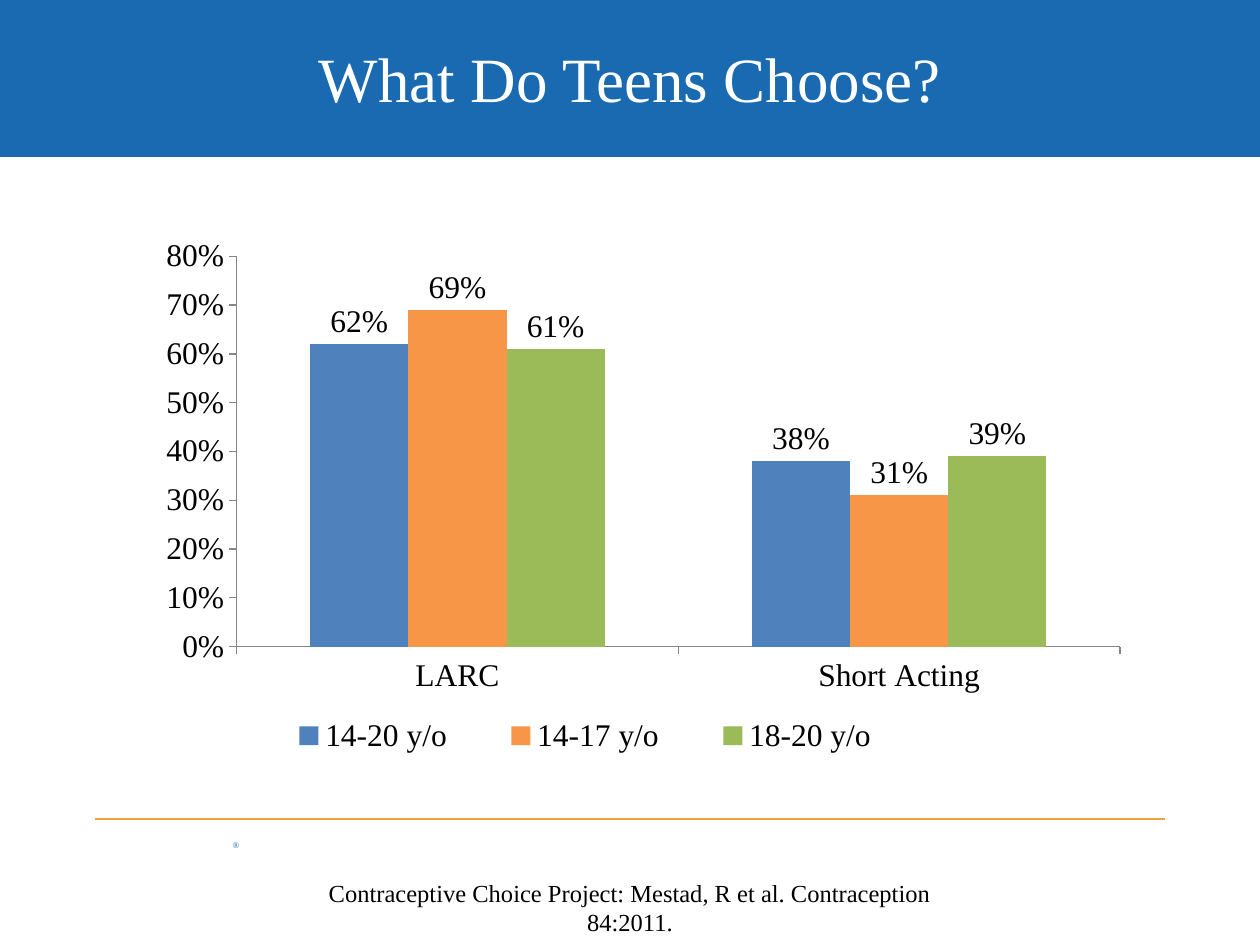
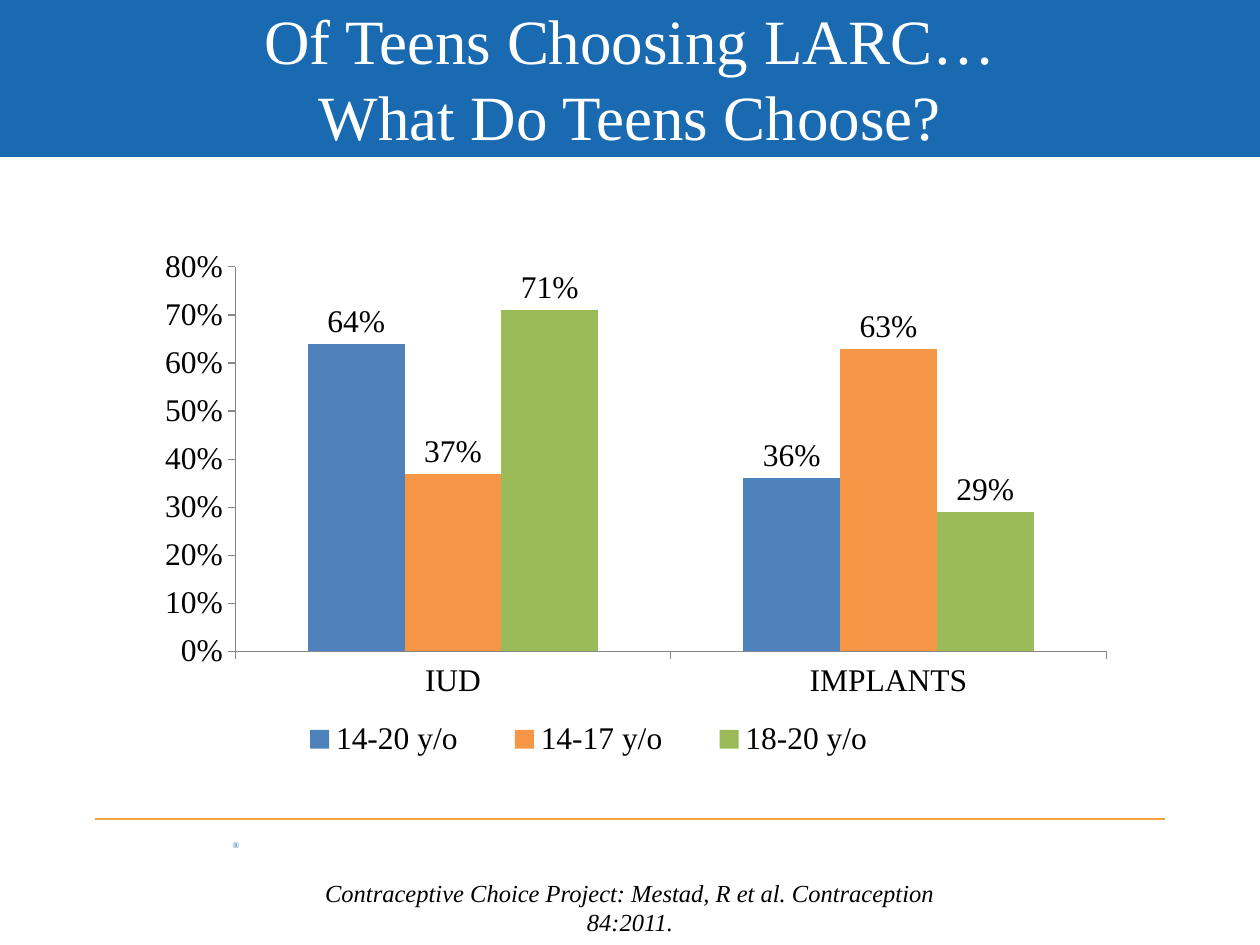
import pptx
import pptx.chart.data
import pptx.dml.color
import pptx.enum.chart
import pptx.enum.shapes
import pptx.enum.text
import pptx.oxml
import pptx.oxml.ns
import pptx.util
from lxml import etree

# Content
CITATION = "Contraceptive Choice Project: Mestad, R et al. Contraception 84:2011."
AGE_GROUPS = [("14-20 y/o", "4F81BD"), ("14-17 y/o", "F79646"), ("18-20 y/o", "9BBB59")]
SLIDES = [
    {
        "title": "What Do Teens Choose?",
        "categories": ["LARC", "Short Acting"],
        "values": [(0.62, 0.38), (0.69, 0.31), (0.61, 0.39)],
        "chart_box": (147, 220, 985, 543),
        "legend_box": (0.1, 0.9, 0.69, 0.1),
        "italic_citation": False,
    },
    {
        "title": "Of Teens Choosing LARC…\nWhat Do Teens Choose?",
        "categories": ["IUD", "IMPLANTS"],
        "values": [(0.64, 0.36), (0.37, 0.63), (0.71, 0.29)],
        "chart_box": (147, 231, 971, 535),
        "legend_box": (0.12, 0.9, 0.67, 0.1),
        "italic_citation": True,
    },
]

# Shared style
PX = 914400 // 126
FONT = "Times New Roman"
BLUE, GOLD, WHITE, BLACK, GREY = "196AB0", "EEA33C", "FFFFFF", "000000", "868686"
PLOT_BOX = (0.091, 0.067, 0.897, 0.719)


def px(*lengths):
    return [pptx.util.Emu(length * PX) for length in lengths]


def rgb(color):
    return pptx.dml.color.RGBColor.from_string(color)


def set_font(font, size, color):
    font.name = FONT
    font.size = pptx.util.Pt(size)
    font.color.rgb = rgb(color)


def add_text(slide, box, text, size, color, inset=(13, 6), middle=False, italic=False):
    tf = slide.shapes.add_textbox(*px(*box)).text_frame
    tf.word_wrap = True
    tf.margin_left = tf.margin_right = px(inset[0])[0]
    tf.margin_top = tf.margin_bottom = px(inset[1])[0]
    if middle:
        tf.vertical_anchor = pptx.enum.text.MSO_ANCHOR.MIDDLE
    p = tf.paragraphs[0]
    p.text = text
    p.alignment = pptx.enum.text.PP_ALIGN.CENTER
    set_font(p.font, size, color)
    p.font.italic = italic


def add_frame(slide):
    """Title band, footer rule and registered mark."""
    band = slide.shapes.add_shape(
        pptx.enum.shapes.MSO_SHAPE.RECTANGLE, *px(0, 0, 1260, 157))
    band.shadow.inherit = False
    band.fill.solid()
    band.fill.fore_color.rgb = rgb(BLUE)
    band.line.fill.background()
    add_text(slide, (220, 840, 32, 10), "®", 5, BLUE, inset=(0, 0))
    rule = slide.shapes.add_connector(
        pptx.enum.shapes.MSO_CONNECTOR.STRAIGHT, *px(95, 819, 1165, 819))
    rule.line.color.rgb = rgb(GOLD)
    rule.line.width = pptx.util.Pt(0.75)
    etree.SubElement(rule._element.spPr, pptx.oxml.ns.qn("a:effectLst"))


def place(part, box, inner=False):
    """Give a chart part a manual layout in fractions of the chart."""
    target = '<c:layoutTarget val="inner"/>' if inner else ""
    sizes = "".join(f'<c:{tag} val="{v}"/>' for tag, v in zip("xywh", box))
    layout = pptx.oxml.parse_xml(
        f'<c:layout {pptx.oxml.ns.nsdecls("c")}><c:manualLayout>{target}'
        f'<c:xMode val="edge"/><c:yMode val="edge"/>{sizes}</c:manualLayout></c:layout>')
    for old in part.findall(pptx.oxml.ns.qn("c:layout")):
        part.remove(old)
    legend_pos = part.find(pptx.oxml.ns.qn("c:legendPos"))
    part.insert(0 if legend_pos is None else 1, layout)


def add_age_chart(slide, content):
    data = pptx.chart.data.CategoryChartData(number_format="0%")
    data.categories = content["categories"]
    for (name, _), values in zip(AGE_GROUPS, content["values"]):
        data.add_series(name, values)
    chart = slide.shapes.add_chart(
        pptx.enum.chart.XL_CHART_TYPE.COLUMN_CLUSTERED,
        *px(*content["chart_box"]), data).chart
    set_font(chart.font, 18, BLACK)
    chart.has_title = False

    # Columns and their values
    plot = chart.plots[0]
    plot.gap_width = 150
    plot.overlap = 0
    plot.vary_by_categories = False
    for series, (_, color) in zip(plot.series, AGE_GROUPS):
        series.format.fill.solid()
        series.format.fill.fore_color.rgb = rgb(color)
        labels = series.data_labels
        labels.show_value = True
        labels.number_format = "0%"
        labels.number_format_is_linked = False
        labels.position = pptx.enum.chart.XL_LABEL_POSITION.OUTSIDE_END

    # Axes
    for axis in (chart.category_axis, chart.value_axis):
        axis.has_major_gridlines = False
        axis.major_tick_mark = pptx.enum.chart.XL_TICK_MARK.OUTSIDE
        axis.format.line.color.rgb = rgb(GREY)
    chart.value_axis.minimum_scale = 0
    chart.value_axis.maximum_scale = 0.8
    chart.value_axis.major_unit = 0.1
    chart.value_axis.tick_labels.number_format = "0%"
    chart.value_axis.tick_labels.number_format_is_linked = False

    # Legend and plot area
    chart.has_legend = True
    chart.legend.position = pptx.enum.chart.XL_LEGEND_POSITION.BOTTOM
    chart.legend.include_in_layout = False
    place(chart.legend._element, content["legend_box"])
    place(chart._chartSpace.chart.plotArea, PLOT_BOX, inner=True)


def main():
    prs = pptx.Presentation()
    prs.slide_width, prs.slide_height = px(1260, 945)
    for content in SLIDES:
        slide = prs.slides.add_slide(prs.slide_layouts[6])
        add_frame(slide)
        add_text(slide, (63, 10, 1134, 134), content["title"], 36, WHITE, middle=True)
        add_age_chart(slide, content)
        add_text(slide, (310, 872, 640, 43), CITATION, 14, BLACK,
                 italic=content["italic_citation"])
    prs.save("out.pptx")


if __name__ == "__main__":
    main()
